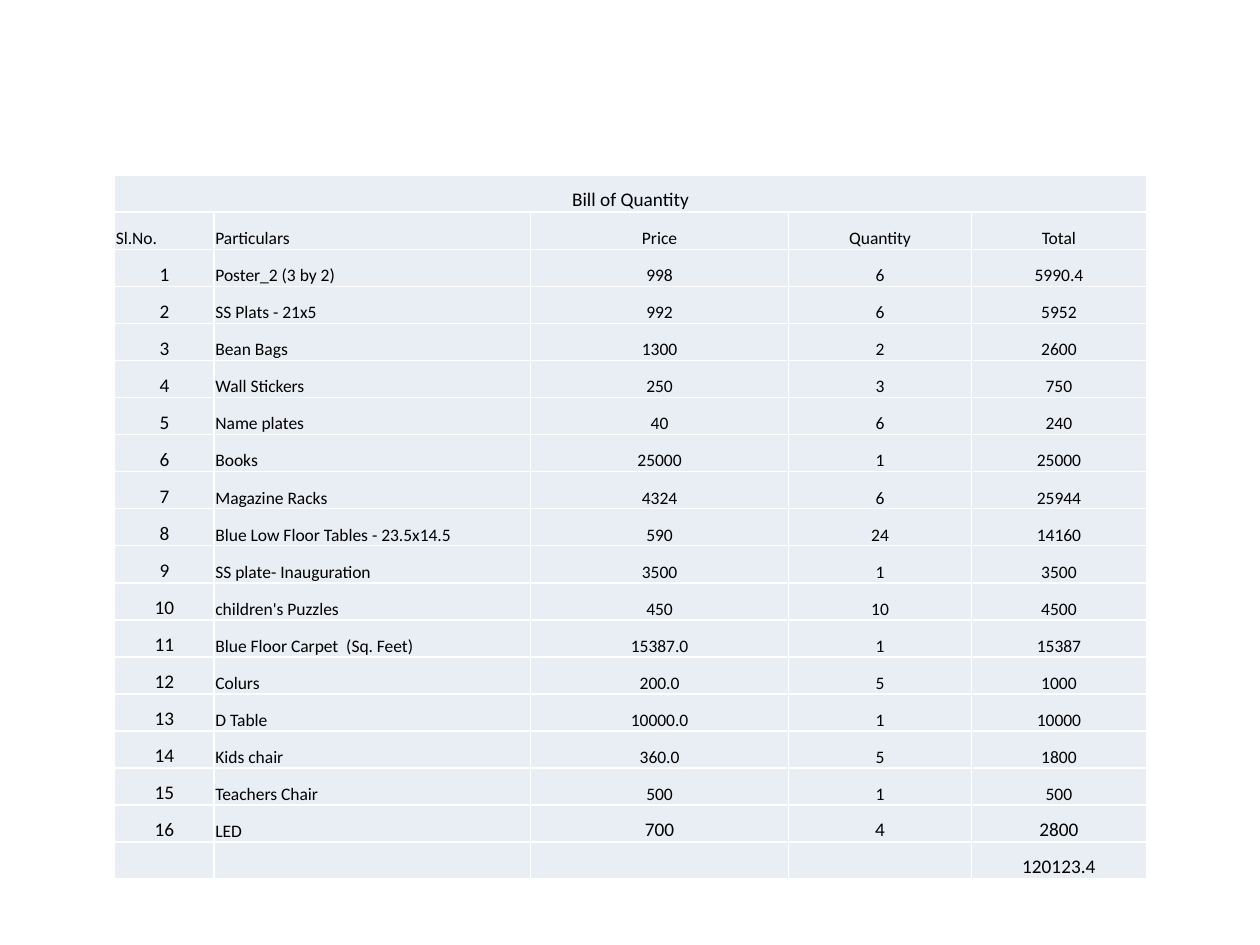
"""Build a slide with a bill of quantity table."""
import pptx
import pptx.dml.color
import pptx.enum.text
import pptx.oxml
import pptx.oxml.ns
import pptx.util

TITLE = "Bill of Quantity"
HEADS = ("Sl.No.", "Particulars", "Price", "Quantity", "Total")
ITEMS = [
    ("Poster_2 (3 by 2)", "998", "6", "5990.4"),
    ("SS Plats - 21x5", "992", "6", "5952"),
    ("Bean Bags", "1300", "2", "2600"),
    ("Wall Stickers", "250", "3", "750"),
    ("Name plates", "40", "6", "240"),
    ("Books", "25000", "1", "25000"),
    ("Magazine Racks", "4324", "6", "25944"),
    ("Blue Low Floor Tables - 23.5x14.5", "590", "24", "14160"),
    ("SS plate- Inauguration", "3500", "1", "3500"),
    ("children's Puzzles", "450", "10", "4500"),
    ("Blue Floor Carpet  (Sq. Feet)", "15387.0", "1", "15387"),
    ("Colurs", "200.0", "5", "1000"),
    ("D Table", "10000.0", "1", "10000"),
    ("Kids chair", "360.0", "5", "1800"),
    ("Teachers Chair", "500", "1", "500"),
    ("LED", "700", "4", "2800"),
]
SUM = "120123.4"

THEME = {"font": "Calibri", "ink": "000000", "fill": "E9EDF4",
         "rule": "FFFFFF", "line": 1, "big": 11, "small": 10}
SIZE = (10, 7.5)
AREA = (0.91, 1.39, 8.19, 5.59)
COLS = (0.79, 2.51, 2.05, 1.45, 1.39)

inch = pptx.util.Inches
tint = pptx.dml.color.RGBColor.from_string
align = pptx.enum.text.PP_ALIGN
CELL = {"margin_left": inch(0.01), "margin_right": inch(0.01),
        "margin_top": inch(0.01), "margin_bottom": 0,
        "vertical_anchor": pptx.enum.text.MSO_ANCHOR.BOTTOM}
PLAIN = {"first_row": False, "horz_banding": False}


def apply(item, form):
    for name, value in form.items():
        setattr(item, name, value)


def edge(cell):
    props = cell._tc.get_or_add_tcPr()
    width = pptx.util.Pt(THEME["line"])
    for place, side in enumerate("LRTB"):
        props.insert(place, pptx.oxml.parse_xml(
            f'<a:ln{side} {pptx.oxml.ns.nsdecls("a")} w="{width}"><a:solidFill>'
            f'<a:srgbClr val="{THEME["rule"]}"/></a:solidFill></a:ln{side}>'))


def write(cell, text, size, side):
    apply(cell, CELL)
    cell.fill.solid()
    cell.fill.fore_color.rgb = tint(THEME["fill"])
    edge(cell)
    para = cell.text_frame.paragraphs[0]
    para.alignment = side
    if text:
        run = para.add_run()
        run.text = text
        apply(run.font, {"name": THEME["font"], "size": pptx.util.Pt(size)})
        run.font.color.rgb = tint(THEME["ink"])
    else:
        para._p.get_or_add_endParaRPr().set("sz", str(size * 100))


def main():
    deck = pptx.Presentation()
    deck.slide_width, deck.slide_height = map(inch, SIZE)
    slide = deck.slides.add_slide(deck.slide_layouts[6])

    rows = [(TITLE, "", "", "", ""), HEADS]
    rows += [(str(num), *item) for num, item in enumerate(ITEMS, 1)]
    rows.append(("", "", "", "", SUM))
    last = len(rows) - 1

    table = slide.shapes.add_table(
        len(rows), len(COLS), *map(inch, AREA)).table
    apply(table, PLAIN)
    for col, width in zip(table.columns, COLS):
        col.width = inch(width)
    for row in table.rows:
        row.height = inch(AREA[3] / len(rows))

    for r, row in enumerate(rows):
        for c, text in enumerate(row):
            big = r in (0, last) or (r > 1 and c == 0) or (r == last - 1 and c > 1)
            left = (c == 1 and r > 0) or (r == 1 and c == 0)
            write(table.cell(r, c), text, THEME["big" if big else "small"],
                  align.LEFT if left else align.CENTER)
    table.cell(0, 0).merge(table.cell(0, len(COLS) - 1))
    deck.save("out.pptx")


if __name__ == "__main__":
    main()
